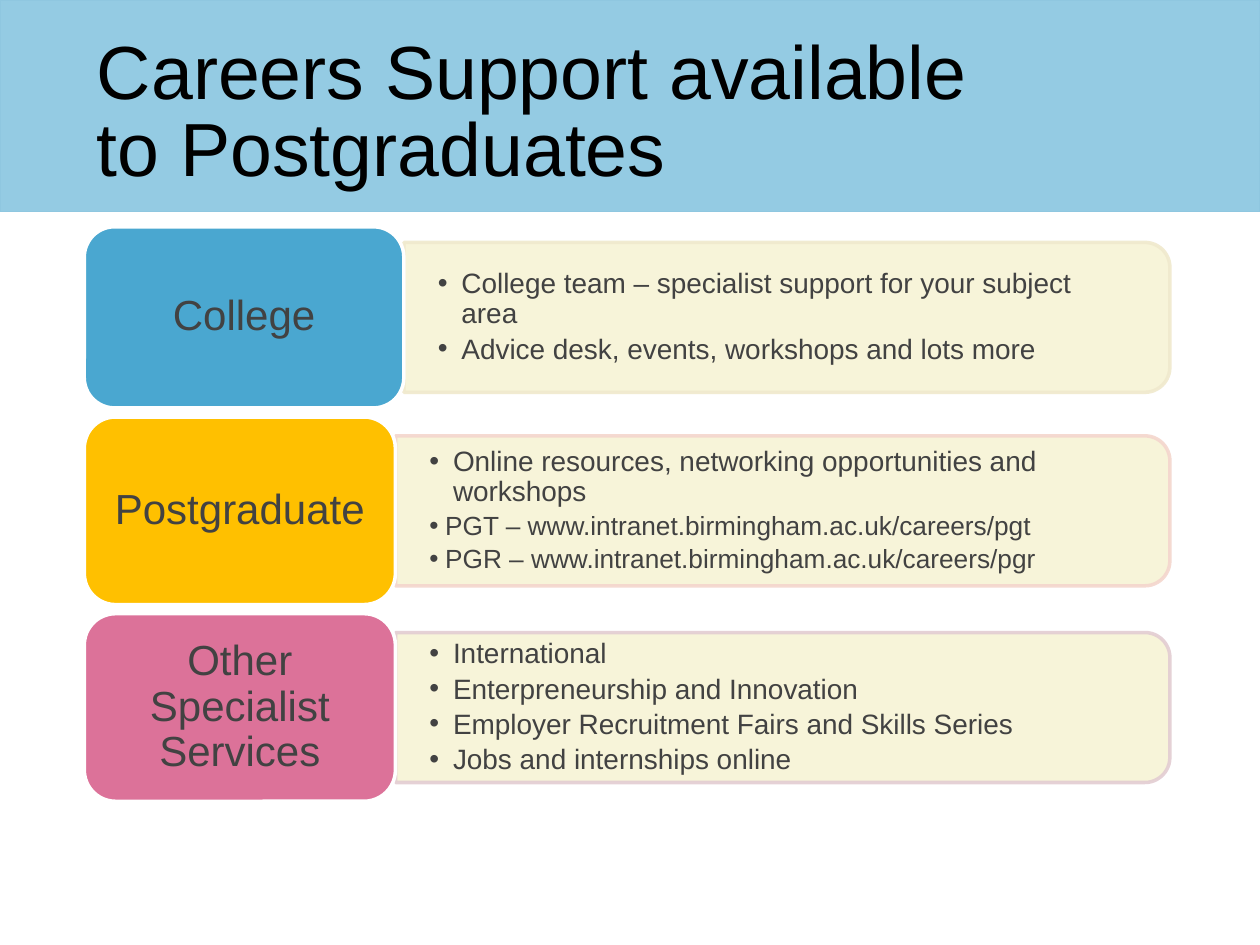
from dataclasses import dataclass

import lxml.etree
import pptx
import pptx.dml.color
import pptx.enum.shapes
import pptx.enum.text
import pptx.oxml.ns
import pptx.util

Pt = pptx.util.Pt
Shapes = pptx.enum.shapes.MSO_SHAPE
Anchor = pptx.enum.text.MSO_ANCHOR
Align = pptx.enum.text.PP_ALIGN
qn = pptx.oxml.ns.qn

TAG_LEFT, ROWS_TOP, ROW_GAP = 48.2, 129.6, 5.2
PANEL_RIGHT, PANEL_HEIGHT = 668.5, 85.7
LIST_HEIGHT, LIST_TRIM = 77, 4.2
TEXT_COLOUR = "424242"


@dataclass(frozen=True)
class Item:
    text: str
    size: float = 16
    indent: float = 13.5


@dataclass(frozen=True)
class Row:
    label: str
    fill: str
    edge: str
    width: float
    height: float
    items: tuple[Item, ...]


ROWS = (
    Row("College", "4AA7D0", "F0E9CD", 182.6, 103.5, (
        Item("College team – specialist support for your subject area"),
        Item("Advice desk, events, workshops and lots more"),
    )),
    Row("Postgraduate", "FFC000", "F4D6CD", 177.8, 107.2, (
        Item("Online resources, networking opportunities and workshops"),
        Item("PGT – www.intranet.birmingham.ac.uk/careers/pgt", 15, 9),
        Item("PGR – www.intranet.birmingham.ac.uk/careers/pgr", 15, 9),
    )),
    Row("Other Specialist Services", "DC7299", "E3CDD2", 177.8, 107.2, (
        Item("International"),
        Item("Enterpreneurship and Innovation"),
        Item("Employer Recruitment Fairs and Skills Series"),
        Item("Jobs and internships online"),
    )),
)


def colour(value: str) -> pptx.dml.color.RGBColor:
    return pptx.dml.color.RGBColor.from_string(value)


def apply(target, values: dict) -> None:
    for name, value in values.items():
        setattr(target, name, value)


def place(shape, left: float, top: float, width: float, height: float) -> None:
    apply(shape, {"left": Pt(left), "top": Pt(top), "width": Pt(width), "height": Pt(height)})


def add_block(page, kind, left: float, top: float, width: float, height: float,
              fill: str, edge: str, weight: float):
    block = page.shapes.add_shape(kind, Pt(left), Pt(top), Pt(width), Pt(height))
    block.shadow.inherit = False
    block.fill.solid()
    block.fill.fore_color.rgb = colour(fill)
    block.line.color.rgb = colour(edge)
    block.line.width = Pt(weight)
    return block


def add_span(para, text: str, size: float, ink: str) -> None:
    span = para.add_run()
    span.text = text
    apply(span.font, {"name": "Arial", "size": Pt(size)})
    span.font.color.rgb = colour(ink)


def add_bullet(para, indent: float) -> None:
    properties = para._p.get_or_add_pPr()
    properties.set("marL", str(Pt(indent)))
    properties.set("indent", str(-Pt(indent)))
    lxml.etree.SubElement(properties, qn("a:buFont")).set("typeface", "Arial")
    lxml.etree.SubElement(properties, qn("a:buChar")).set("char", "•")


def add_panel(page, row: Row, left: float, middle: float) -> None:
    length = PANEL_RIGHT - left
    panel = add_block(page, Shapes.ROUND_2_SAME_RECTANGLE,
                      left + (length - PANEL_HEIGHT) / 2, middle - length / 2,
                      PANEL_HEIGHT, length, "F7F3D5", row.edge, 2)
    panel.rotation = 90
    for paint in panel.element.spPr.iter(qn("a:srgbClr")):
        lxml.etree.SubElement(paint, qn("a:alpha")).set("val", "90000")


def add_list(page, row: Row, left: float, middle: float) -> None:
    box = page.shapes.add_textbox(Pt(left), Pt(middle - LIST_HEIGHT / 2),
                                  Pt(PANEL_RIGHT - left - LIST_TRIM), Pt(LIST_HEIGHT))
    frame = box.text_frame
    apply(frame, {"word_wrap": True, "vertical_anchor": Anchor.MIDDLE,
                  "margin_left": Pt(19.4), "margin_right": Pt(19.4),
                  "margin_top": 0, "margin_bottom": 0})
    for index, item in enumerate(row.items):
        para = frame.add_paragraph() if index else frame.paragraphs[0]
        add_bullet(para, item.indent)
        apply(para, {"level": 1, "line_spacing": 0.9, "space_before": Pt(0),
                     "space_after": Pt(2.8)})
        add_span(para, item.text, item.size, TEXT_COLOUR)


def add_tag(page, row: Row, top: float) -> None:
    tag = add_block(page, Shapes.ROUNDED_RECTANGLE, TAG_LEFT, top, row.width, row.height,
                    row.fill, "FFFFFF", 2)
    apply(tag.text_frame, {"word_wrap": True, "vertical_anchor": Anchor.MIDDLE})
    para = tag.text_frame.paragraphs[0]
    apply(para, {"alignment": Align.CENTER, "line_spacing": 0.9})
    add_span(para, row.label, 24, TEXT_COLOUR)


def add_heading(page) -> None:
    banner = add_block(page, Shapes.RECTANGLE, 0, 0, 720, 121, "94CBE3", "8FC7E0", 0.75)
    title = page.shapes.title
    title.element.addprevious(banner.element)
    place(title, 48.2, 28, 547.2, 85)
    apply(title.text_frame, {"word_wrap": True, "vertical_anchor": Anchor.BOTTOM,
                             "auto_size": pptx.enum.text.MSO_AUTO_SIZE.NONE})
    para = title.text_frame.paragraphs[0]
    apply(para, {"alignment": Align.LEFT, "line_spacing": Pt(44), "space_before": Pt(0)})
    add_span(para, "Careers Support available to Postgraduates", 43, "000000")


def main() -> None:
    deck = pptx.Presentation()
    apply(deck, {"slide_width": Pt(720), "slide_height": Pt(540)})
    page = deck.slides.add_slide(deck.slide_layouts.get_by_name("Title Only"))
    add_heading(page)
    top = ROWS_TOP
    for row in ROWS:
        left, middle = TAG_LEFT + row.width, top + row.height / 2
        add_panel(page, row, left, middle)
        add_list(page, row, left, middle)
        add_tag(page, row, top)
        top += row.height + ROW_GAP
    deck.save("out.pptx")


if __name__ == "__main__":
    main()
